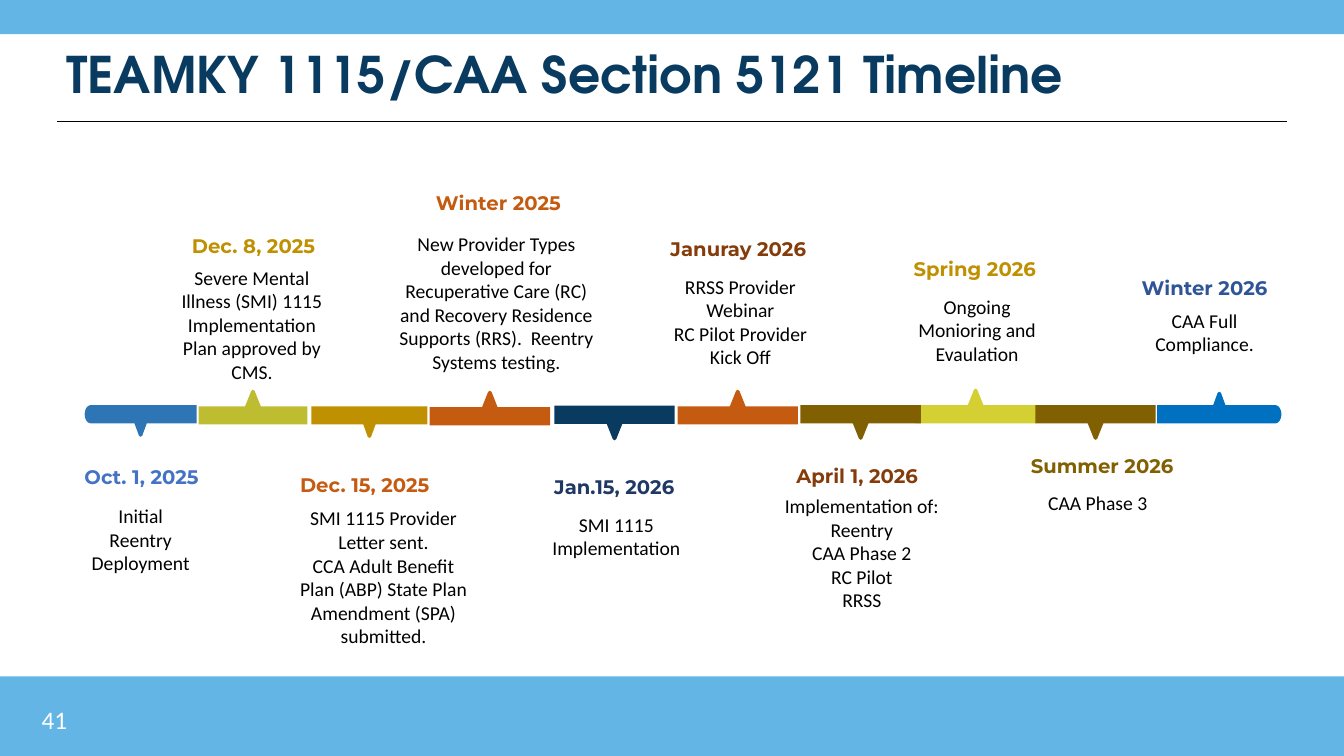
import math
import pptx
import pptx.util
import pptx.dml.color
import pptx.enum.shapes
import pptx.enum.text
import pptx.oxml.ns
import lxml.etree

Pt = pptx.util.Pt
ALIGN = pptx.enum.text.PP_ALIGN
ANCHOR = pptx.enum.text.MSO_ANCHOR

COLORS = {
    "sky": "62B5E5", "navy": "093B60", "black": "000000", "white": "FFFFFF",
    "blue": "2E75B6", "lime": "BEBD31", "gold": "BF9000", "orange": "C55A11",
    "olive": "806000", "yellow": "D4D034", "azure": "0070C0", "brown": "843C0B",
    "periwinkle": "4472C4", "indigo": "203864", "royal": "2F5597",
}

TITLE = "TEAMKY 1115/CAA Section 5121 Timeline"
PAGE_NUMBER = "41"
BANDS = [(0, 24.5), (483.1, 56.9)]

BAR_HEIGHT = 13
LARGE_TIP = (5.6, 11.8)
SMALL_TIP = (4.4, 9.6)
SEGMENTS = [
    (60.5, 289.4, 79.9, "blue", "down", SMALL_TIP, "left"),
    (141.8, 290.2, 77.8, "lime", "up", LARGE_TIP, None),
    (222.5, 290.2, 82.8, "gold", "down", SMALL_TIP, None),
    (306.9, 290.9, 86, "orange", "up", LARGE_TIP, None),
    (396, 289.7, 86, "navy", "down", LARGE_TIP, None),
    (484, 290.2, 86, "orange", "up", LARGE_TIP, None),
    (571.8, 289.4, 86, "olive", "down", LARGE_TIP, None),
    (653.9, 289.4, 86, "yellow", "up", LARGE_TIP, None),
    (739.6, 289.4, 86, "olive", "down", LARGE_TIP, None),
    (826.6, 289.4, 88.7, "azure", "up", SMALL_TIP, "right"),
]

DATE_HEIGHT = 31.4
WIDE_INSET = (9.6, 9.6)
NORMAL_INSET = (7.2, 3.6)
EVENTS = [
    ("Oct. 1, 2025", "periwinkle", (38.9, 326.2, 124.6), (47.2, 356.4, 106.6, 58.3),
     NORMAL_INSET, ["Initial", "Reentry Deployment"]),
    ("Dec. 8, 2025", "gold", (118.8, 160.6, 124.6), (118.2, 180, 123.5, 115.2),
     WIDE_INSET, ["Severe Mental Illness (SMI) 1115 Implementation Plan approved by CMS."]),
    ("Dec. 15, 2025", "orange", (195.1, 331.4, 131), (201.6, 352.1, 144.7, 99.4),
     WIDE_INSET, ["SMI 1115 Provider Letter sent.",
                  "CCA Adult Benefit Plan (ABP) State Plan Amendment (SPA) submitted."]),
    ("Winter 2025", "orange", (293.8, 130.3, 124.6), (270.7, 156.2, 167.8, 89.3),
     WIDE_INSET, ["New Provider Types developed for Recuperative Care (RC) and Recovery "
                  "Residence Supports (RRS).  Reentry Systems testing."]),
    ("Jan.15, 2026", "indigo", (365, 332.9, 147.6), (381.6, 356.4, 117.4, 99.4),
     WIDE_INSET, ["SMI 1115 Implementation"]),
    ("Januray 2026", "brown", (453.6, 163.4, 147.6), (470.2, 186.5, 117.4, 99.4),
     WIDE_INSET, ["RRSS Provider Webinar", "RC Pilot Provider Kick Off"]),
    ("April 1, 2026", "brown", (540, 324.9, 144.7), (544.3, 343.4, 142.6, 99.4),
     WIDE_INSET, ["Implementation of:", "Reentry", "CAA Phase 2", "RC Pilot", "RRSS"]),
    ("Spring 2026", "gold", (632.2, 177.1, 128.2), (634.3, 200.9, 127.4, 99.4),
     WIDE_INSET, ["Ongoing Monioring and Evaulation"]),
    ("Summer 2026", "olive", (707, 318.2, 160.6), (727.2, 342.3, 113.8, 99.4),
     WIDE_INSET, ["CAA Phase 3"]),
    ("Winter 2026", "royal", (796.3, 190.8, 128.2), (801.4, 211, 118.1, 54.7),
     WIDE_INSET, ["CAA Full Compliance."]),
]


def rgb(name):
    return pptx.dml.color.RGBColor.from_string(COLORS[name])


def paint(shape, color):
    shape.fill.solid()
    shape.fill.fore_color.rgb = rgb(color)
    shape.line.fill.background()
    shape.shadow.inherit = False


def write(frame, lines, font, size, color, bold=False, align=ALIGN.LEFT):
    frame.word_wrap = True
    for index, line in enumerate(lines):
        para = frame.add_paragraph() if index else frame.paragraphs[0]
        para.alignment = align
        span = para.add_run()
        span.text = line
        span.font.name = font
        span.font.size = Pt(size)
        span.font.bold = bold
        span.font.color.rgb = rgb(color)


def add_text(page, bounds, inset, anchor, *style):
    frame = page.shapes.add_textbox(*map(Pt, bounds)).text_frame
    frame.margin_left = frame.margin_right = Pt(inset[0])
    frame.margin_top = frame.margin_bottom = Pt(inset[1])
    frame.vertical_anchor = anchor
    write(frame, *style)


def add_segment(page, left, top, width, color, direction, tip, rounded):
    half, rise = tip
    steps = [math.pi * step / 12 - math.pi / 2 for step in range(13)]
    cap = [(width - 4.3 + 4.3 * math.cos(a), BAR_HEIGHT / 2 * (1 + math.sin(a))) for a in steps]
    far_end = cap if rounded else [(width, 0), (width, BAR_HEIGHT)]
    middle = width / 2
    outline = [(0, 0), (middle - half, 0), (middle - 1.2, 0.8 - rise), (middle, -rise),
               (middle + 1.2, 0.8 - rise), (middle + half, 0)] + far_end + [(0, BAR_HEIGHT)]
    if rounded == "left":
        outline = [(width - x, y) for x, y in outline]
    if direction == "down":
        outline = [(x, BAR_HEIGHT - y) for x, y in outline]
    points = [(Pt(left + x), Pt(top + y)) for x, y in outline]
    builder = page.shapes.build_freeform(*points[0])
    builder.add_line_segments(points[1:], close=True)
    paint(builder.convert_to_shape(), color)


def main():
    deck = pptx.Presentation()
    deck.slide_width, deck.slide_height = Pt(960), Pt(540)
    page = deck.slides.add_slide(deck.slide_layouts[5])

    for top, height in BANDS:
        band = page.shapes.add_shape(pptx.enum.shapes.MSO_SHAPE.RECTANGLE,
                                     0, Pt(top), deck.slide_width, Pt(height))
        paint(band, "sky")

    title = page.shapes.title
    title.left, title.top, title.width, title.height = map(Pt, (40.3, 32.4, 884.2, 46.1))
    title.text_frame.vertical_anchor = ANCHOR.MIDDLE
    write(title.text_frame, [TITLE], "TeX Gyre Adventor", 36, "navy", True)
    title.text_frame.paragraphs[0].line_spacing = 0.9

    rule = page.shapes.add_connector(pptx.enum.shapes.MSO_CONNECTOR.STRAIGHT,
                                     *map(Pt, (40.6, 86.4, 919.4, 86.4)))
    rule.line.color.rgb = rgb("black")
    rule.line.width = Pt(0.5)
    lxml.etree.SubElement(rule._element.spPr, pptx.oxml.ns.qn("a:effectLst"))

    for segment in sorted(SEGMENTS, key=lambda item: item[4] == "down"):
        add_segment(page, *segment)

    for date, color, date_bounds, body_bounds, inset, lines in EVENTS:
        add_text(page, (*date_bounds, DATE_HEIGHT), WIDE_INSET, ANCHOR.BOTTOM,
                 [date], "Montserrat", 14, color, True, ALIGN.CENTER)
        add_text(page, body_bounds, inset, ANCHOR.TOP,
                 lines, "Calibri", 14, "black", False, ALIGN.CENTER)

    add_text(page, (22.6, 499.7, 216, 28.8), NORMAL_INSET, ANCHOR.TOP,
             [PAGE_NUMBER], "Calibri", 18, "white")
    deck.save("out.pptx")


if __name__ == "__main__":
    main()
